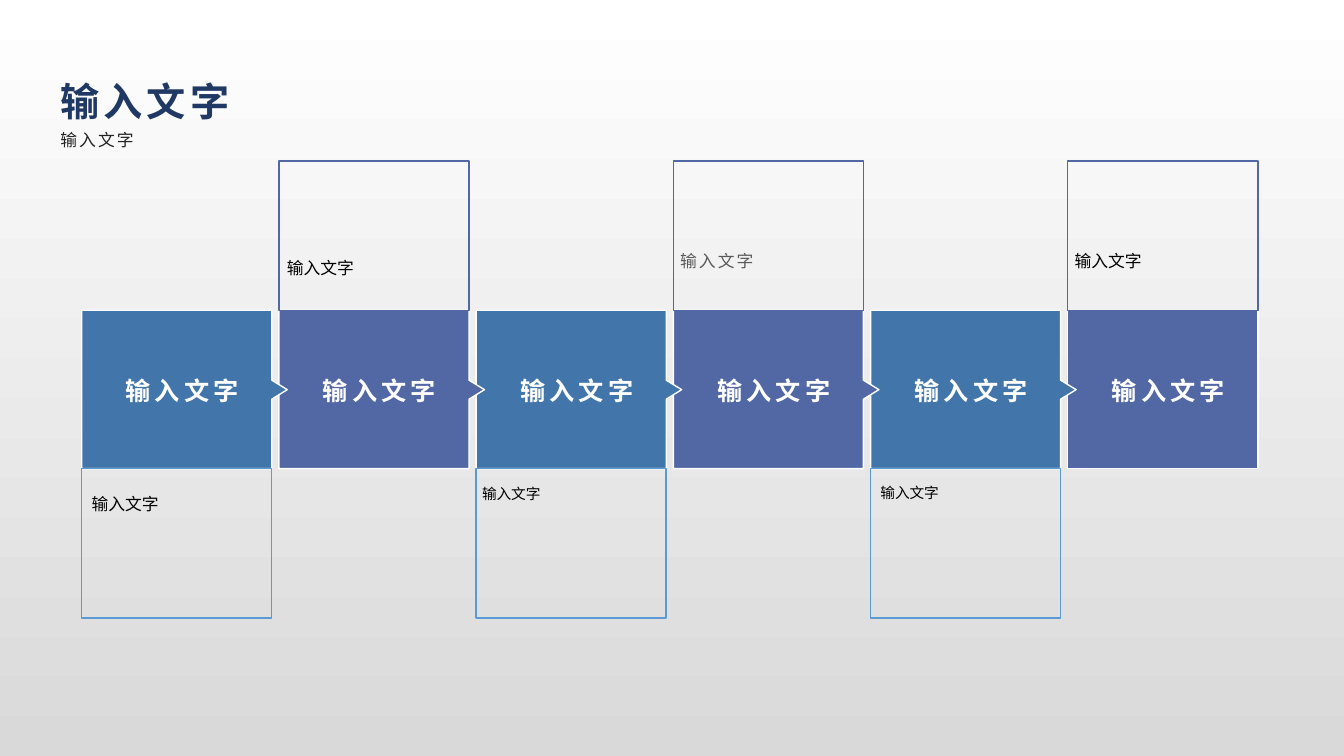
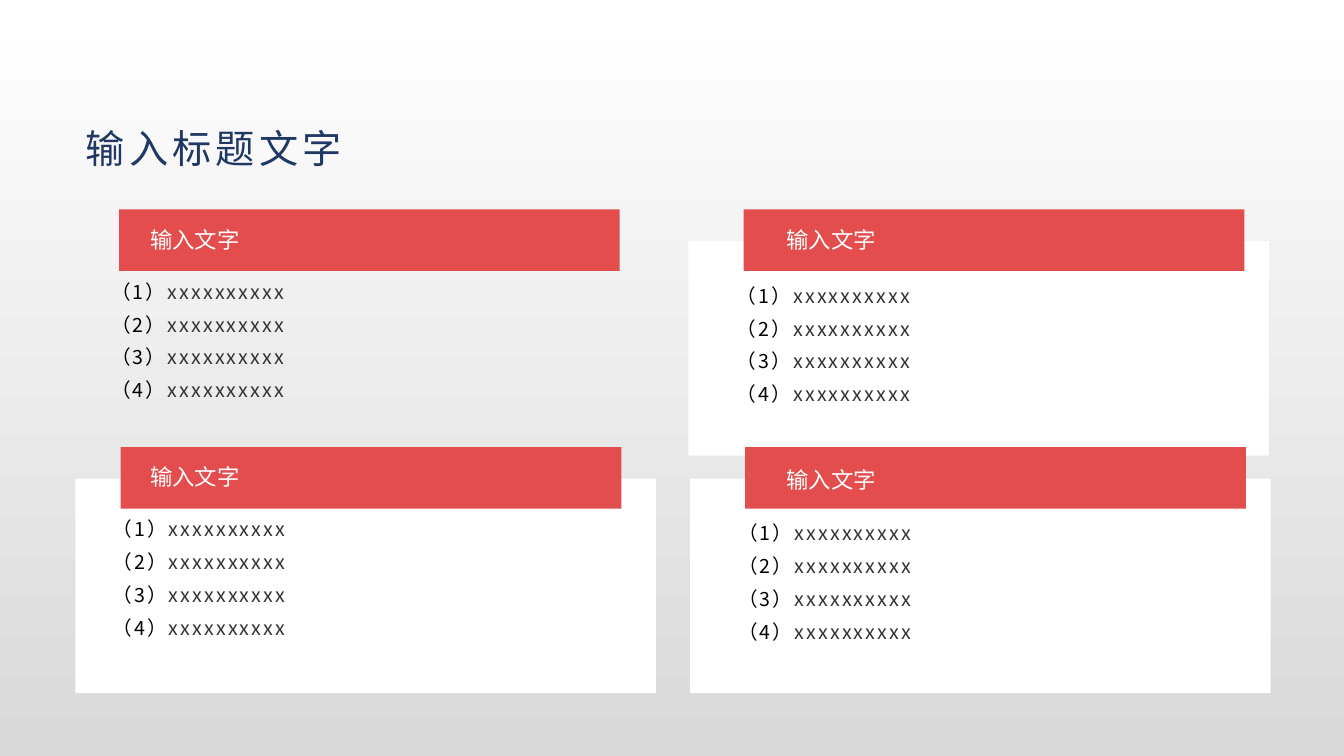
from itertools import product

from lxml.etree import SubElement
from pptx import Presentation
from pptx.dml.color import RGBColor
from pptx.enum.shapes import MSO_SHAPE
from pptx.enum.text import MSO_ANCHOR, MSO_AUTO_SIZE, PP_ALIGN
from pptx.oxml.ns import qn
from pptx.util import Cm, Pt

FONT = "Noto Sans CJK SC"
NAVY, INK, DARK, GREY = "203864", "222222", "333333", "595959"
BLUE, INDIGO, SKY, RED = "4276AA", "5268A5", "5B9BD5", "E34D4D"
WHITE, BLACK, MIST = "FFFFFF", "000000", "D9D9D9"
TEXT = "输入文字"
TITLE = {"size": 28, "color": NAVY, "spacing": 3}


def rgb(value):
    return RGBColor.from_string(value)


def assign(target, values):
    for name, value in values.items():
        setattr(target, name, value)


class Deck:
    def __init__(self):
        self.prs = Presentation()
        assign(self.prs, {"slide_width": Cm(33.87), "slide_height": Cm(19.05)})
        backdrop = self.prs.slide_master.background.fill
        backdrop.gradient()
        backdrop.gradient_angle = 270
        for stop, (position, color) in zip(backdrop.gradient_stops, ((0, WHITE), (1, MIST))):
            stop.position = position
            stop.color.rgb = rgb(color)
        self.slide = None

    def new_slide(self, layout):
        self.slide = self.prs.slides.add_slide(self.prs.slide_layouts[layout])

    def paint(self, shape, fill=None, line=None):
        shape.shadow.inherit = False
        for part, color in ((shape.fill, fill), (shape.line.fill, line)):
            if color:
                part.solid()
                part.fore_color.rgb = rgb(color)
            else:
                part.background()
        if line:
            shape.line.width = Pt(1)

    def rect(self, box, fill=None, line=None):
        shape = self.slide.shapes.add_shape(MSO_SHAPE.RECTANGLE, *map(Cm, box))
        self.paint(shape, fill, line)

    def outline(self, points, fill, line):
        start, *rest = [(Cm(x), Cm(y)) for x, y in points]
        builder = self.slide.shapes.build_freeform(*start)
        builder.add_line_segments(rest, close=True)
        self.paint(builder.convert_to_shape(), fill, line)

    def add_styled_run(self, paragraph, text, size, color, bold=False, spacing=0):
        run = paragraph.add_run()
        run.text = text
        run.font.color.rgb = rgb(color)
        assign(run.font, {"name": FONT, "size": Pt(size), "bold": bold})
        props = run.font._element
        props.set("spc", str(int(spacing * 100)))
        SubElement(props, qn("a:ea")).set("typeface", FONT)

    def fill_frame(self, frame, lines, insets=(0.25, 0.13, 0.25, 0.13), anchor=MSO_ANCHOR.TOP,
                   align=PP_ALIGN.LEFT, leading=1.0, after=0, indent=0, wrap=True):
        sides = ("margin_left", "margin_top", "margin_right", "margin_bottom")
        assign(frame, dict(zip(sides, map(Cm, insets))))
        assign(frame, {"word_wrap": wrap, "vertical_anchor": anchor,
                       "auto_size": MSO_AUTO_SIZE.NONE})
        for number, runs in enumerate(lines):
            paragraph = frame.add_paragraph() if number else frame.paragraphs[0]
            assign(paragraph, {"alignment": align, "line_spacing": leading,
                               "space_before": Pt(0), "space_after": Pt(after)})
            props = paragraph._p.get_or_add_pPr()
            props.set("marL", "0")
            props.set("indent", str(Cm(indent)))
            SubElement(props, qn("a:buNone"))
            for text, style in runs:
                self.add_styled_run(paragraph, text, **style)

    def text(self, box, text, style, **layout):
        frame = self.slide.shapes.add_textbox(*map(Cm, box)).text_frame
        self.fill_frame(frame, [[(text, style)]], **layout)

    def placeholder(self, index, box, lines, **layout):
        holder = self.slide.placeholders[index]
        assign(holder, dict(zip(("left", "top", "width", "height"), map(Cm, box))))
        holder.element.getparent().append(holder.element)
        self.fill_frame(holder.text_frame, lines, **layout)


def process_slide(deck):
    deck.new_slide(1)
    deck.placeholder(0, (1.27, 1.7, 30.48, 1.45), [[(TEXT, {**TITLE, "bold": True})]],
                     insets=(0.25, 0.13, 0.25, 0), leading=1.1)
    deck.placeholder(1, (1.27, 3.17, 30.45, 0.86),
                     [[(TEXT, {"size": 12, "color": INK, "spacing": 1.5})]],
                     insets=(0.25, 0, 0.25, 0.13), leading=1.2)

    width, top, bottom, middle = 4.79, 7.82, 11.81, 9.82
    notch, tip = 0.24, 0.39
    lefts = [2.06 + 4.97 * step for step in range(6)]

    deck.rect((lefts[5], top, width, bottom - top), INDIGO, WHITE)
    for step in reversed(range(5)):
        left, right = lefts[step], lefts[step] + width
        arrow = [(left, top), (right, top), (right, middle - notch), (right + tip, middle),
                 (right, middle + notch), (right, bottom), (left, bottom)]
        deck.outline(arrow, INDIGO if step % 2 else BLUE, WHITE)

    plain, small = {"size": 12, "color": BLACK}, {"size": 10.5, "color": BLACK}
    soft = {"size": 12, "color": GREY, "spacing": 1.5}
    notes = [(0, 12.07, plain, 1.5), (-0.05, 3.3, plain, 1.5), (-0.1, 11.86, small, 1.5),
             (-0.08, 3.12, soft, 1.4), (0, 11.84, small, 1.5), (-0.08, 3.12, plain, 1.4)]
    label = {"size": 18, "color": WHITE, "bold": True, "spacing": 3}
    for step, (left, (shift, note_top, style, leading)) in enumerate(zip(lefts, notes)):
        above = step % 2
        deck.text((left + 0.14, 9.13, width, 1.27), TEXT, label,
                  anchor=MSO_ANCHOR.MIDDLE, align=PP_ALIGN.CENTER, leading=1.2)
        deck.text((left + shift, note_top, 5.08, 3.84), TEXT, style, leading=leading,
                  anchor=MSO_ANCHOR.BOTTOM if above else MSO_ANCHOR.TOP)
        deck.rect((left, 4.06 if above else bottom, width, 3.76),
                  line=INDIGO if above else SKY)


def lists_slide(deck):
    deck.new_slide(4)
    deck.placeholder(0, (1.88, 3.17, 29.36, 1.75), [[("输入标题文字", TITLE)]],
                     insets=(0.28, 0.1, 0.18, 0.1), leading=0.9)

    number = {"size": 14, "color": BLACK, "spacing": 1.5}
    items = [[(f"（{count}）", number), ("xxxxxxxxxx", {**number, "color": DARK})]
             for count in range(1, 5)]
    heading = {"size": 16, "color": WHITE}
    for index, (row, col) in enumerate(product(range(2), repeat=2), 1):
        if row or col:
            deck.rect((1.86 + 15.49 * col + 0.04 * row, 6.07 + 5.99 * row, 14.63, 5.41), WHITE)
        deck.rect((3 + 15.74 * col + 0.04 * row, 5.28 + 5.99 * row, 12.62, 1.55), RED)
        deck.text((3.53 + 16.03 * col, 5.56 + 5.97 * row + 0.08 * row * col, 2.77, 0.94),
                  TEXT, heading, align=PP_ALIGN.CENTER, wrap=False)
        deck.placeholder(index, (1.52 + 15.77 * col + 0.03 * row,
                                 7.11 + 5.99 * row + 0.1 * col, 12.85, 4.32),
                         items, insets=(0.28, 0, 0.23, 0), leading=0.9, after=8.4, indent=1)


def main():
    deck = Deck()
    process_slide(deck)
    lists_slide(deck)
    deck.prs.save("out.pptx")


if __name__ == "__main__":
    main()
